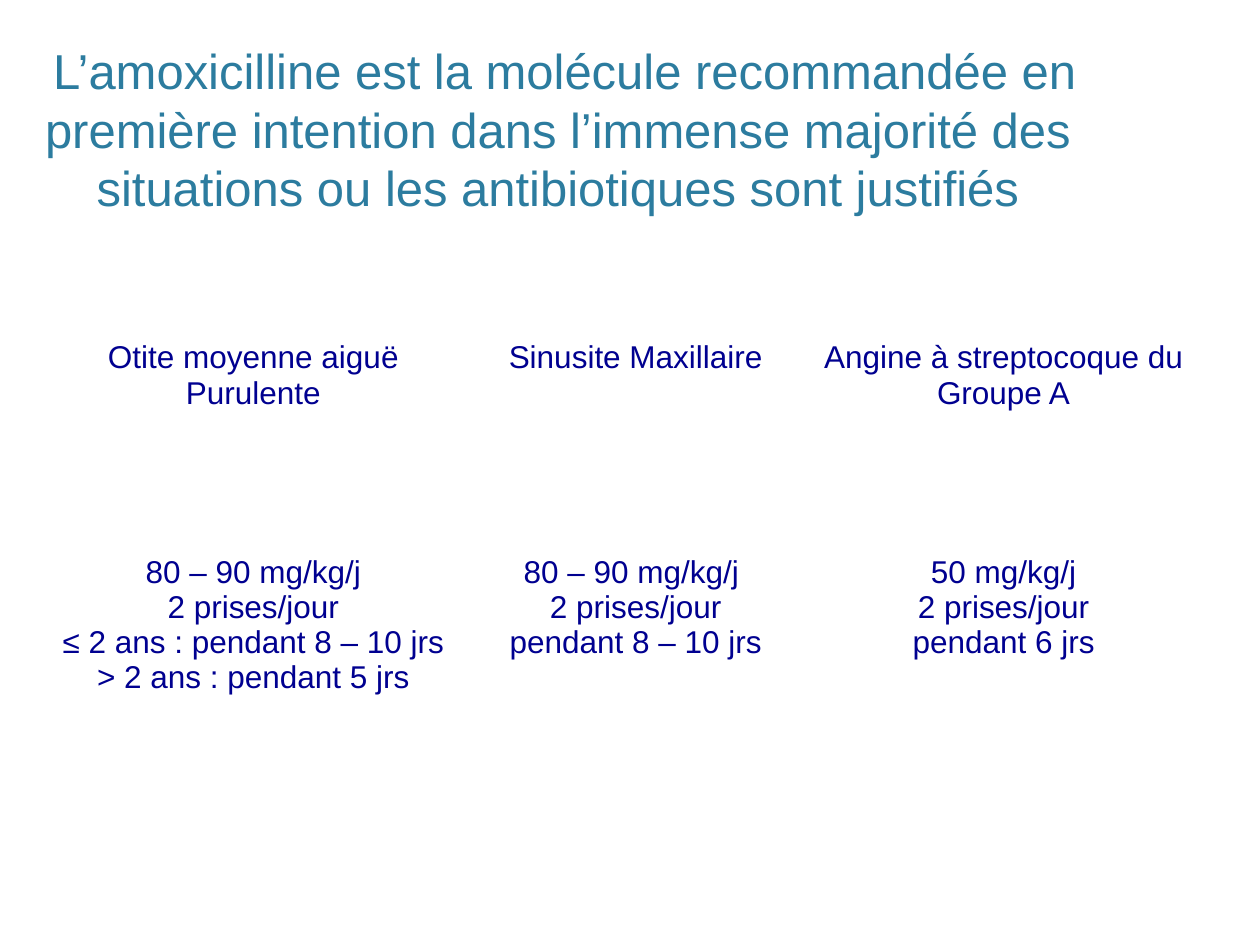
from pptx import Presentation
from pptx.dml.color import RGBColor
from pptx.enum.text import MSO_ANCHOR, PP_ALIGN
from pptx.oxml.ns import qn
from pptx.util import Pt
from lxml.etree import SubElement

TITLE_BLUE = RGBColor(0x2C, 0x7C, 0x9F)
NAVY = RGBColor(0x00, 0x00, 0x90)
WHITE = RGBColor(0xFF, 0xFF, 0xFF)


def style_text(frame, size, color):
    for paragraph in frame.paragraphs:
        paragraph.alignment = PP_ALIGN.CENTER
        for run in paragraph.runs:
            run.font.name = "Arial"
            run.font.size = Pt(size)
            run.font.color.rgb = color


def add_borders(cell, bottom_width):
    properties = cell._tc.get_or_add_tcPr()
    widths = {"a:lnL": 1, "a:lnR": 1, "a:lnT": 1, "a:lnB": bottom_width}
    for tag, width in widths.items():
        line = SubElement(properties, qn(tag), w=str(Pt(width)))
        fill = SubElement(line, qn("a:solidFill"))
        SubElement(fill, qn("a:srgbClr"), val=str(WHITE))


prs = Presentation()
prs.slide_width, prs.slide_height = Pt(720), Pt(540)
slide = prs.slides.add_slide(prs.slide_layouts[6])
slide.background.fill.solid()
slide.background.fill.fore_color.rgb = WHITE

# Title
title = slide.shapes.add_textbox(Pt(-26.6), Pt(37.4), Pt(690.5), Pt(90)).text_frame
title.word_wrap = True
title.vertical_anchor = MSO_ANCHOR.BOTTOM
title.text = (" L’amoxicilline est la molécule recommandée en première intention "
              "dans l’immense majorité des situations ou les antibiotiques sont justifiés")
style_text(title, 28, TITLE_BLUE)

# Treatment table: infections above, dosages below
treatments = [
    ["Otite moyenne aiguë\nPurulente", "Sinusite Maxillaire",
     "Angine à streptocoque du Groupe A"],
    ["80 – 90 mg/kg/j\n2 prises/jour\n≤ 2 ans : pendant 8 – 10 jrs\n> 2 ans : pendant 5 jrs",
     "80 – 90 mg/kg/j \n2 prises/jour\npendant 8 – 10 jrs",
     "50 mg/kg/j\n2 prises/jour\npendant 6 jrs"],
]
column_widths = [234.7, 202.3, 218.2]
row_heights = [99.4, 108]

table = slide.shapes.add_table(2, 3, Pt(27.4), Pt(190.8),
                               Pt(sum(column_widths)), Pt(sum(row_heights))).table
table.horz_banding = False
for column, width in zip(table.columns, column_widths):
    column.width = Pt(width)
for row, height in zip(table.rows, row_heights):
    row.height = Pt(height)

for r, row_texts in enumerate(treatments):
    for c, text in enumerate(row_texts):
        cell = table.cell(r, c)
        cell.text_frame.text = text
        cell.margin_left = cell.margin_right = Pt(6.5)
        cell.margin_top = cell.margin_bottom = Pt(3.6)
        cell.vertical_anchor = MSO_ANCHOR.MIDDLE if r else MSO_ANCHOR.TOP
        style_text(cell.text_frame, 18, NAVY)
        add_borders(cell, 1 if r else 3)
        cell.fill.background()

# The four-line dosage starts level with its neighbours
table.cell(1, 0).margin_top = Pt(23.8)

prs.save("out.pptx")
